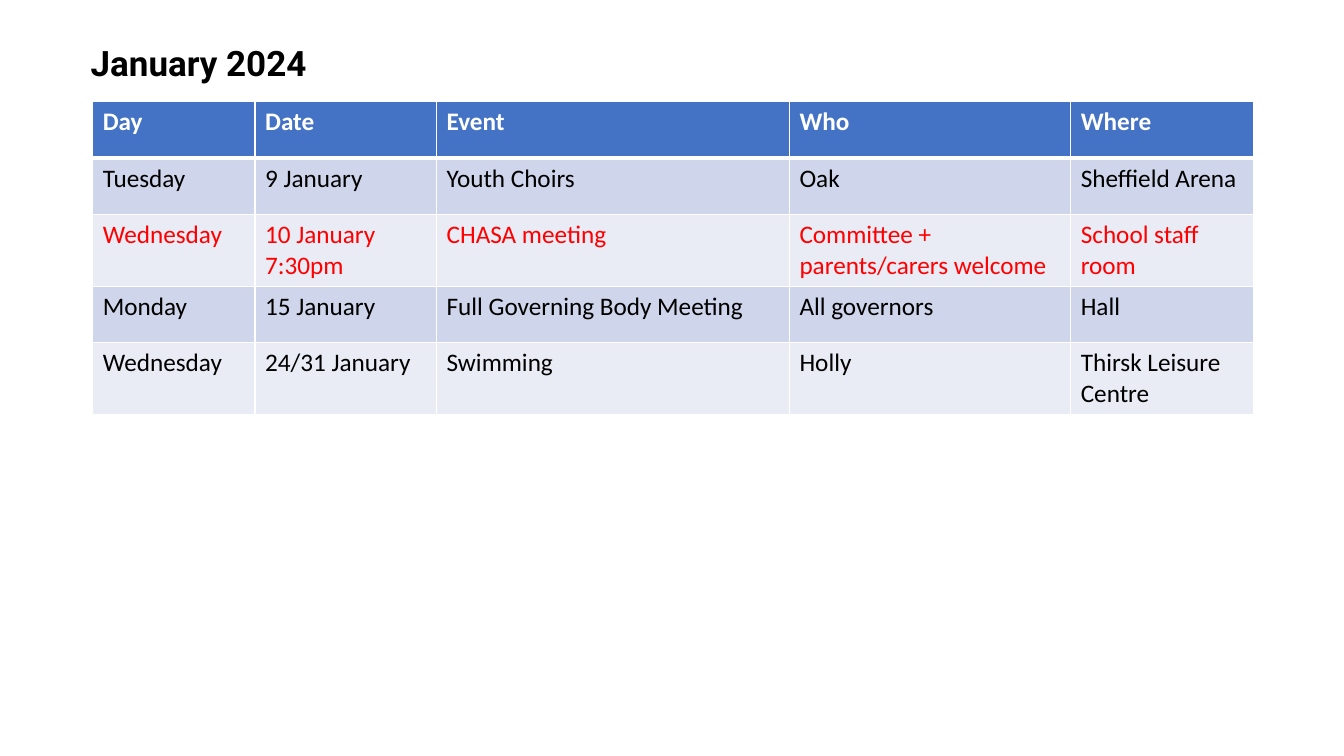
"""Build the January 2024 school calendar slide."""
from pptx import Presentation
from pptx.dml.color import RGBColor
from pptx.enum.text import MSO_ANCHOR, PP_ALIGN
from pptx.oxml import parse_xml
from pptx.oxml.ns import nsdecls
from pptx.util import Inches, Pt

LEFT = PP_ALIGN.LEFT
TOP, MIDDLE = MSO_ANCHOR.TOP, MSO_ANCHOR.MIDDLE

TITLE = "January 2024"
HEAD = ("Day", "Date", "Event", "Who", "Where")
EVENTS = [
    ("Tuesday", "9 January", "Youth Choirs", "Oak", "Sheffield Arena"),
    ("Wednesday", "10 January\n7:30pm", "CHASA meeting",
     "Committee + parents/carers welcome", "School staff room"),
    ("Monday", "15 January", "Full Governing Body Meeting", "All governors", "Hall"),
    ("Wednesday", "24/31 January", "Swimming", "Holly", "Thirsk Leisure Centre"),
]
ALERT = 2
WIDTHS = (1.61, 1.8, 3.5, 2.79, 1.81)
HEIGHT = 0.56
COLORS = {"head": "4472C4", "odd": "CFD5EA", "even": "E9EBF5",
          "white": "FFFFFF", "black": "000000", "red": "FF0000"}


def write(frame, text, size=18, font="Calibri", color="black", bold=False, anchor=TOP):
    frame.text = text
    frame.word_wrap = True
    frame.vertical_anchor = anchor
    for para in frame.paragraphs:
        para.alignment = LEFT
        for run in para.runs:
            run.font.size = Pt(size)
            run.font.name = font
            run.font.bold = bold
            run.font.color.rgb = RGBColor.from_string(COLORS[color])


def border(cell, **widths):
    props = cell._tc.get_or_add_tcPr()
    for side in "LRTB":
        width = Pt(widths.get(side, 1))
        props.append(parse_xml(
            f'<a:ln{side} {nsdecls("a")} w="{width}"><a:solidFill>'
            f'<a:srgbClr val="{COLORS["white"]}"/></a:solidFill></a:ln{side}>'))


def main():
    deck = Presentation()
    deck.slide_width, deck.slide_height = Inches(13.33), Inches(7.5)
    slide = deck.slides.add_slide(deck.slide_layouts[5])

    title = slide.shapes.title
    title.left, title.top = Inches(0.8), Inches(0.36)
    title.width, title.height = Inches(4.45), Inches(0.52)
    write(title.text_frame, TITLE, size=25, font="Roboto", bold=True, anchor=MIDDLE)

    rows = [HEAD, *EVENTS]
    table = slide.shapes.add_table(
        len(rows), len(HEAD), Inches(0.92), Inches(1.01),
        Inches(sum(WIDTHS)), Inches(HEIGHT * len(rows))).table
    for col, width in zip(table.columns, WIDTHS):
        col.width = Inches(width)
    for r, row in enumerate(rows):
        table.rows[r].height = Inches(HEIGHT)
        fill = "head" if r == 0 else "odd" if r % 2 else "even"
        color = "white" if r == 0 else "red" if r == ALERT else "black"
        edges = {0: {"B": 3}, 1: {"T": 3}}.get(r, {})
        for c, text in enumerate(row):
            cell = table.cell(r, c)
            border(cell, **edges)
            cell.fill.solid()
            cell.fill.fore_color.rgb = RGBColor.from_string(COLORS[fill])
            write(cell.text_frame, text, color=color, bold=r == 0)

    deck.save("out.pptx")


if __name__ == "__main__":
    main()
